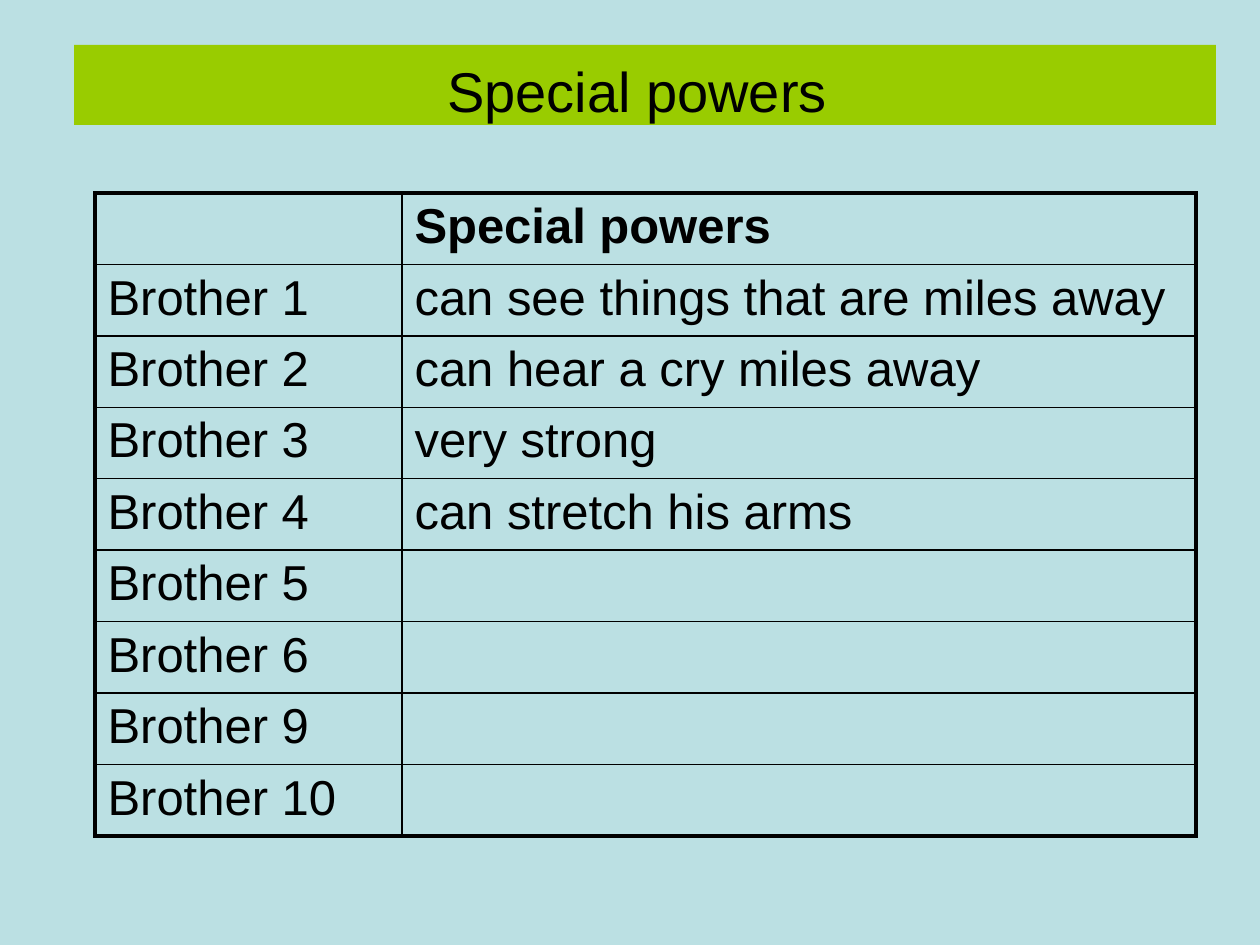
import lxml.etree
import pptx
import pptx.dml.color
import pptx.enum.text
import pptx.oxml.ns
import pptx.util

TITLE = "Special powers "
ROWS = [
    ("", "Special powers"),
    ("Brother 1", "can see things that are miles away"),
    ("Brother 2", "can hear a cry miles away"),
    ("Brother 3", "very strong"),
    ("Brother 4", "can stretch his arms"),
    ("Brother 5", ""),
    ("Brother 6", ""),
    ("Brother 9", ""),
    ("Brother 10", ""),
]
COLUMN_WIDTHS = [307, 794]
TABLE_LEFT, TABLE_TOP, TABLE_HEIGHT = 95, 193, 643
TITLE_BOX = (74, 45, 1142, 80)
INNER_LINE, OUTER_LINE = 1, 2.25
BACKGROUND, BANNER, INK = "BBE0E3", "99CC00", "000000"

qn = pptx.oxml.ns.qn


def px(count):
    return pptx.util.Emu(round(count * 914400 / 126))


def paint(fill, color):
    fill.solid()
    fill.fore_color.rgb = pptx.dml.color.RGBColor.from_string(color)


def write(frame, text, size=28, bold=False, align=pptx.enum.text.PP_ALIGN.LEFT):
    paragraph = frame.paragraphs[0]
    paragraph.alignment = align
    run = paragraph.add_run()
    run.text = text
    run.font.name = "Arial"
    run.font.size = pptx.util.Pt(size)
    run.font.bold = bold
    paint(run.font.fill, INK)
    return paragraph


def add_border(cell, side, width):
    line = lxml.etree.SubElement(cell._tc.get_or_add_tcPr(), qn("a:ln" + side),
                                 w=str(pptx.util.Pt(width)))
    solid = lxml.etree.SubElement(line, qn("a:solidFill"))
    lxml.etree.SubElement(solid, qn("a:srgbClr"), val=INK)


deck = pptx.Presentation()
deck.slide_width, deck.slide_height = px(1260), px(945)
slide = deck.slides.add_slide(deck.slide_layouts[5])
paint(slide.background.fill, BACKGROUND)

# Title banner
banner = slide.shapes.title
banner.left, banner.top, banner.width, banner.height = map(px, TITLE_BOX)
paint(banner.fill, BANNER)
banner_text = banner.text_frame
banner_text.auto_size = pptx.enum.text.MSO_AUTO_SIZE.NONE
banner_text.vertical_anchor = pptx.enum.text.MSO_ANCHOR.TOP
banner_text.margin_top, banner_text.margin_bottom = px(11), 0
write(banner_text, TITLE, size=32, align=pptx.enum.text.PP_ALIGN.CENTER)

# Table of brothers and their powers
powers = slide.shapes.add_table(
    len(ROWS), len(COLUMN_WIDTHS), px(TABLE_LEFT), px(TABLE_TOP),
    px(sum(COLUMN_WIDTHS)), px(TABLE_HEIGHT)).table
powers.first_row = powers.horz_banding = False
for column, width in zip(powers.columns, COLUMN_WIDTHS):
    column.width = px(width)

last_row, last_column = len(ROWS) - 1, len(COLUMN_WIDTHS) - 1
for r, row in enumerate(ROWS):
    for c, text in enumerate(row):
        cell = powers.cell(r, c)
        # Heavy outer frame, thin inner lines
        outer_sides = {"L": c == 0, "R": c == last_column,
                       "T": r == 0, "B": r == last_row}
        for side, is_outer in outer_sides.items():
            add_border(cell, side, OUTER_LINE if is_outer else INNER_LINE)
        cell.fill.background()
        if text:
            paragraph = write(cell.text_frame, text, bold=r == 0)
            space = lxml.etree.SubElement(paragraph._p.get_or_add_pPr(), qn("a:spcBef"))
            lxml.etree.SubElement(space, qn("a:spcPct"), val="20000")

deck.save("out.pptx")
